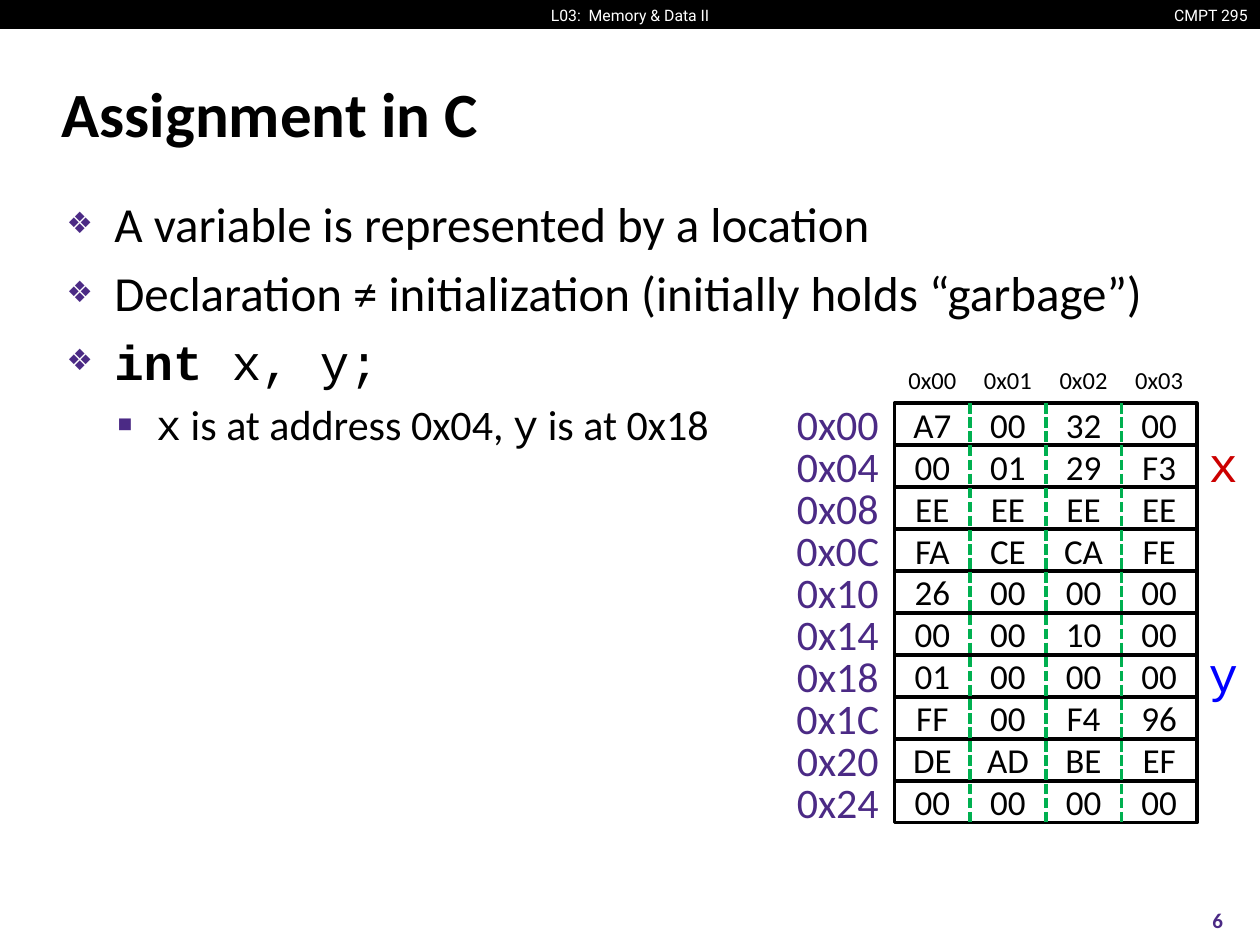
from pptx import Presentation
from pptx.util import Inches, Pt
from pptx.dml.color import RGBColor
from pptx.enum.dml import MSO_LINE as Dash
from pptx.enum.shapes import MSO_SHAPE as Shape, MSO_CONNECTOR as Link
from pptx.enum.text import PP_ALIGN as Align, MSO_ANCHOR as Anchor
from pptx.oxml.ns import qn
from lxml.etree import SubElement

BLACK, WHITE, PURPLE = "000000", "FFFFFF", "4B2A85"
SANS, MONO = "Calibri", "Courier New"

BULLETS = [
    (0, [("A variable is represented by a location", SANS, False)]),
    (0, [("Declaration ≠ initialization (initially holds “garbage”)", SANS, False)]),
    (0, [("int", MONO, True), (" x, y;", MONO, False)]),
    (1, [("x", MONO, False), (" is at address 0x04, ", SANS, False),
         ("y", MONO, False), (" is at 0x18", SANS, False)]),
]
LEVELS = [(28, 0.38, -0.38, "❖", 60), (24, 0.71, -0.31, "▪", 110)]
BYTES = [row.split() for row in (
    "A7 00 32 00", "00 01 29 F3", "EE EE EE EE", "FA CE CA FE", "26 00 00 00",
    "00 00 10 00", "01 00 00 00", "FF 00 F4 96", "DE AD BE EF", "00 00 00 00")]
NAMES = [(1, "x", "CC0000"), (6, "y", "0000FF")]


def paint(text):
    return RGBColor.from_string(text)


def style(run, size, color, face=SANS, bold=False):
    font = run.font
    font.size, font.name, font.bold = Pt(size), face, bold
    font.color.rgb = paint(color)


def frame(slide, box, wrap=False, inset=True, anchor=Anchor.TOP):
    body = slide.shapes.add_textbox(*map(Inches, box)).text_frame
    body.word_wrap = wrap
    body.vertical_anchor = anchor
    if not inset:
        body.margin_left = body.margin_right = 0
        body.margin_top = body.margin_bottom = 0
    return body


def label(slide, box, text, size, color, face=SANS, bold=False,
          align=Align.CENTER, **opts):
    body = frame(slide, box, **opts)
    body.text = text
    para = body.paragraphs[0]
    para.alignment = align
    style(para.runs[0], size, color, face, bold)
    return para


def indent(para, left, first):
    props = para._p.get_or_add_pPr()
    props.set("marL", str(Inches(left)))
    props.set("indent", str(Inches(first)))
    return props


def add(parent, tag, **attrs):
    return SubElement(parent, qn(tag), **attrs)


def bar(slide, box):
    left, top, width, height = box
    band = slide.shapes.add_shape(Shape.RECTANGLE, *map(Inches, box))
    band.shadow.inherit = False
    band.fill.solid()
    band.fill.fore_color.rgb = paint(BLACK)
    band.line.fill.background()
    label(slide, (left + width - 0.81, 0, 0.81, height), "CMPT 295", 9, WHITE,
          "Roboto", align=Align.RIGHT)
    label(slide, (left + (width - 1.49) / 2, 0, 1.49, height),
          "L03:  Memory & Data II", 9, WHITE, "Roboto")


def title(slide, box):
    para = label(slide, box, "Assignment in C", 36, BLACK, bold=True,
                 align=Align.LEFT, wrap=True, anchor=Anchor.MIDDLE)
    indent(para, 0.13, -0.13)


def bullets(slide, box):
    body = frame(slide, box, wrap=True)
    for i, (level, parts) in enumerate(BULLETS):
        para = body.add_paragraph() if i else body.paragraphs[0]
        para.level = level
        size, left, first, mark, scale = LEVELS[level]
        props = indent(para, left, first)
        add(add(props, "a:spcBef"), "a:spcPct", val="20000")
        add(add(props, "a:buClr"), "a:srgbClr", val=PURPLE)
        add(props, "a:buSzPct", val=str(scale * 1000))
        add(props, "a:buFont", typeface=SANS)
        add(props, "a:buChar", char=mark)
        for text, face, bold in parts:
            run = para.add_run()
            run.text = text
            style(run, size, BLACK, face, bold)


def memory(slide, box):
    left, top, width, height = box
    rows, cols = len(BYTES), len(BYTES[0])
    high, wide = height / rows, width / cols
    tight = dict(inset=False, anchor=Anchor.MIDDLE)

    for r in range(rows):
        word = slide.shapes.add_shape(
            Shape.RECTANGLE, *map(Inches, (left, top + r * high, width, high)))
        word.shadow.inherit = False
        word.fill.solid()
        word.fill.fore_color.rgb = paint(WHITE)
        word.line.color.rgb = paint(BLACK)
        word.line.width = Pt(2)

    for c in range(1, cols):
        x = left + c * wide
        rule = slide.shapes.add_connector(
            Link.STRAIGHT, *map(Inches, (x, top, x, top + height)))
        rule.line.color.rgb = paint("00B050")
        rule.line.width = Pt(2)
        rule.line.dash_style = Dash.SQUARE_DOT
        add(rule._element.spPr, "a:effectLst")

    for row, name, color in NAMES:
        label(slide, (left + width + 0.01, top + row * high - 0.03, 0.4, 0.34),
              name, 28, color, MONO, **tight)
    for c in range(cols):
        label(slide, (left + c * wide, top - 0.35, wide, 0.34),
              f"0x{c:02X}", 14, BLACK)
    for r, row in enumerate(BYTES):
        y = top + r * high
        for c, byte in enumerate(row):
            label(slide, (left + c * wide, y, wide, high), byte, 20, BLACK, **tight)
        label(slide, (left - 0.9, y, 0.9, high), f"0x{r * cols:02X}", 24,
              PURPLE, **tight)


def number(slide, box):
    label(slide, box, "6", 12, PURPLE, bold=True, wrap=True, anchor=Anchor.MIDDLE)


def main():
    deck = Presentation()
    deck.slide_width, deck.slide_height = Inches(10), Inches(7.5)
    slide = deck.slides.add_slide(deck.slide_layouts[6])
    bar(slide, (0, -0.02, 10, 0.25))
    title(slide, (0.39, 0.48, 9.19, 0.83))
    bullets(slide, (0.43, 1.49, 9.15, 5.44))
    number(slide, (9.33, 7.1, 0.67, 0.4))
    memory(slide, (7.1, 3.2, 2.4, 3.33))
    deck.save("out.pptx")


if __name__ == "__main__":
    main()
